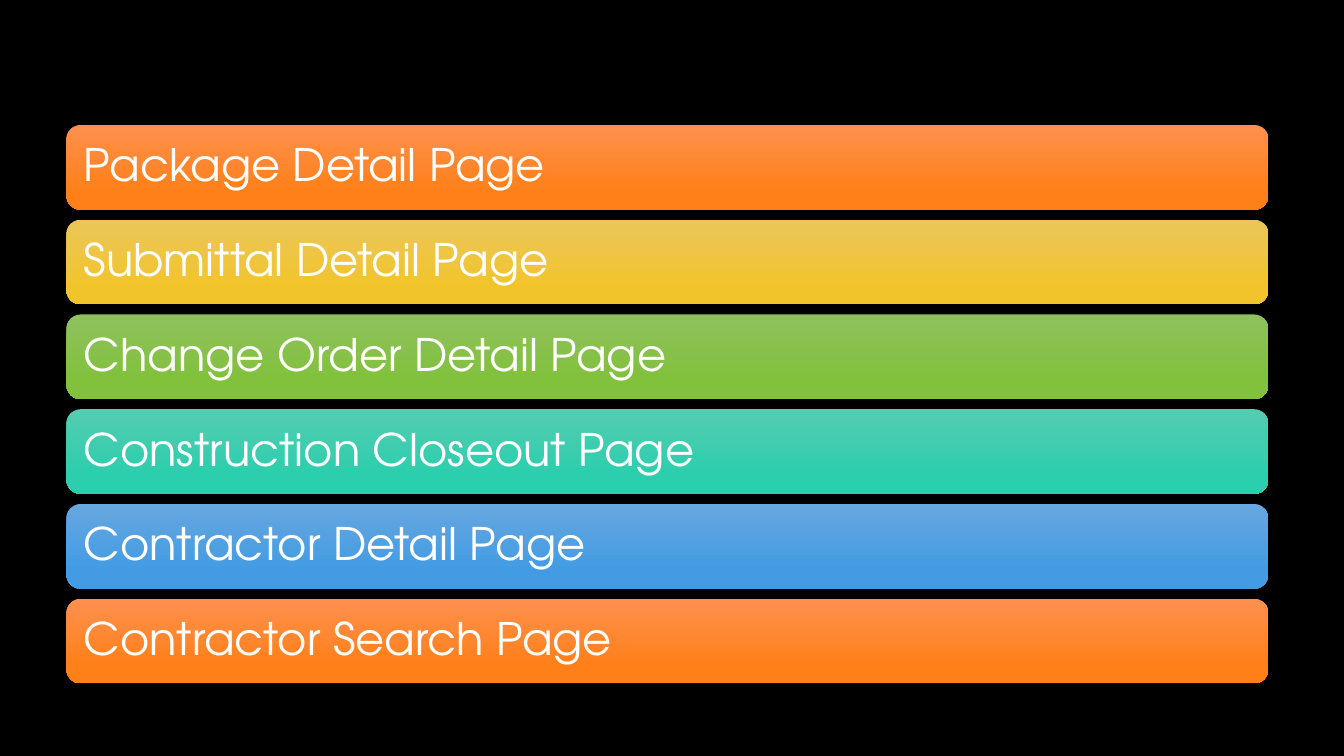
from pptx import Presentation
from pptx.dml.color import RGBColor
from pptx.enum.shapes import MSO_SHAPE
from pptx.enum.text import MSO_ANCHOR, PP_ALIGN
from pptx.util import Inches, Pt

ROUNDED = MSO_SHAPE.ROUNDED_RECTANGLE
MIDDLE = MSO_ANCHOR.MIDDLE
LEFT = PP_ALIGN.LEFT
FONT = "TeX Gyre Adventor"
COLORS = {
    "background": "000000",
    "text": "FFFFFF",
    "orange": ("FE904F", "FF8019"),
    "yellow": ("EBC659", "F2C42C"),
    "green": ("8FC15E", "81C13C"),
    "teal": ("55CCB1", "2BCEAD"),
    "blue": ("66A7E0", "439CE3"),
}
PAGES = [
    ("Package Detail Page", "orange"),
    ("Submittal Detail Page", "yellow"),
    ("Change Order Detail Page", "green"),
    ("Construction Closeout Page", "teal"),
    ("Contractor Detail Page", "blue"),
    ("Contractor Search Page", "orange"),
]
BAR_LEFT, BAR_TOP, BAR_WIDTH, BAR_HEIGHT = 0.66, 1.24, 11.92, 0.84
BAR_PITCH = 0.94
INSET = 0.13


def fill_gradient(shape, colors):
    """Fill a shape with a gradient running from top to bottom."""
    shape.fill.gradient()
    shape.fill.gradient_angle = 270
    for stop, color, position in zip(shape.fill.gradient_stops, colors, (0, 0.78)):
        stop.color.rgb = RGBColor.from_string(color)
        stop.position = position


def write_label(shape, text):
    """Write a left-aligned label in the middle of a bar."""
    frame = shape.text_frame
    frame.word_wrap = True
    frame.vertical_anchor = MIDDLE
    frame.margin_left = frame.margin_right = Inches(INSET)
    frame.margin_top = frame.margin_bottom = Inches(INSET)
    paragraph = frame.paragraphs[0]
    paragraph.text = text
    paragraph.alignment = LEFT
    paragraph.line_spacing = 0.9
    paragraph.font.name = FONT
    paragraph.font.size = Pt(32)
    paragraph.font.color.rgb = RGBColor.from_string(COLORS["text"])


def add_bar(slide, top, text, colors):
    """Add one rounded bar with its label."""
    shape = slide.shapes.add_shape(
        ROUNDED, Inches(BAR_LEFT), Inches(top), Inches(BAR_WIDTH), Inches(BAR_HEIGHT)
    )
    shape.shadow.inherit = False
    shape.line.fill.background()
    fill_gradient(shape, colors)
    write_label(shape, text)


def main():
    """Build the list of pages and save it."""
    presentation = Presentation()
    presentation.slide_width = Inches(13.33)
    presentation.slide_height = Inches(7.5)
    slide = presentation.slides.add_slide(presentation.slide_layouts[6])
    background = slide.background.fill
    background.solid()
    background.fore_color.rgb = RGBColor.from_string(COLORS["background"])
    for index, (text, color) in enumerate(PAGES):
        add_bar(slide, BAR_TOP + index * BAR_PITCH, text, COLORS[color])
    presentation.save("out.pptx")


if __name__ == "__main__":
    main()
